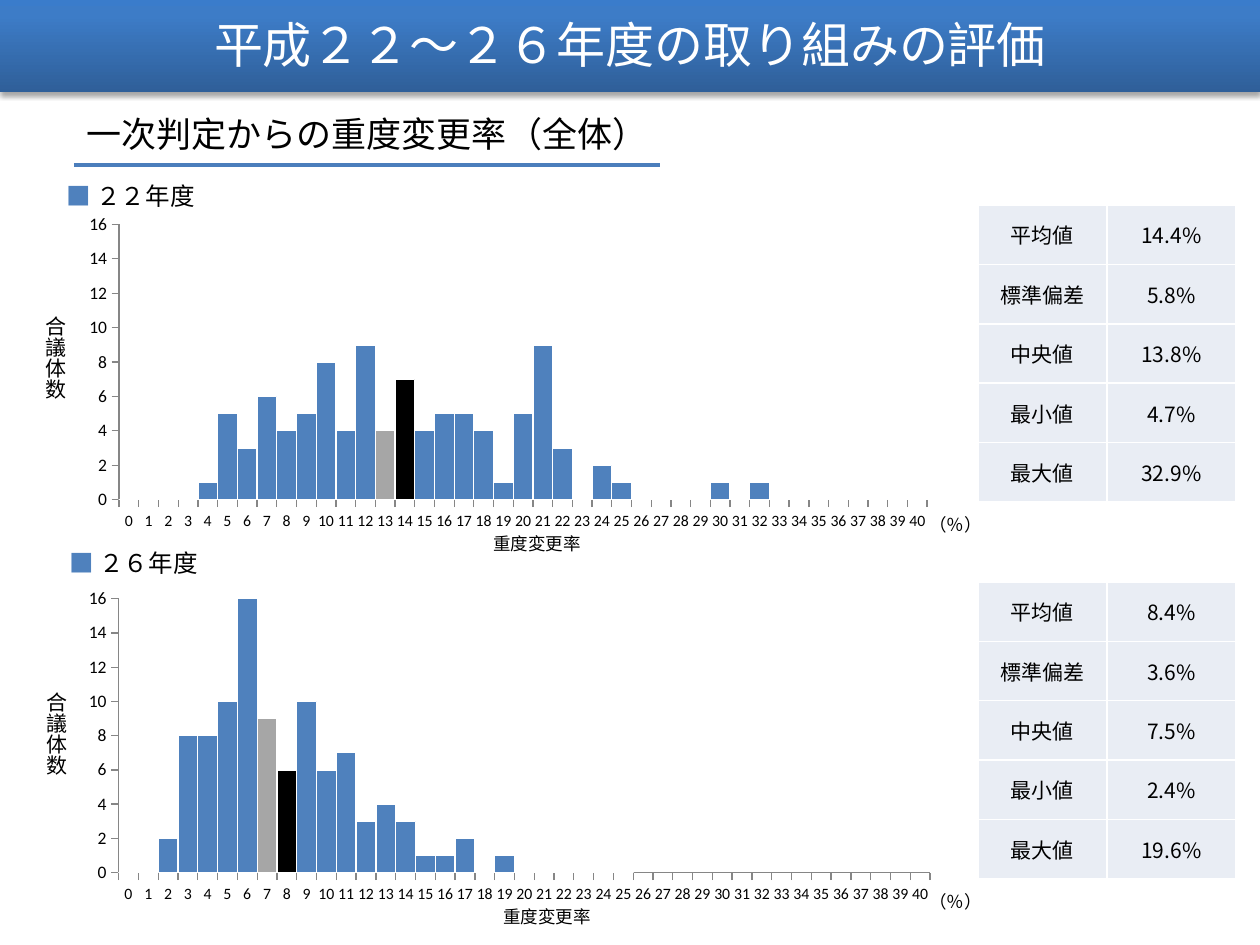
from lxml import etree
from pptx import Presentation
from pptx.chart.data import CategoryChartData
from pptx.dml.color import RGBColor
from pptx.enum.chart import XL_CHART_TYPE, XL_TICK_MARK
from pptx.enum.shapes import MSO_CONNECTOR, MSO_SHAPE
from pptx.enum.text import MSO_ANCHOR, PP_ALIGN
from pptx.oxml import parse_xml
from pptx.oxml.ns import qn
from pptx.util import Emu, Pt

COLUMN = XL_CHART_TYPE.COLUMN_CLUSTERED
OUT, NONE = XL_TICK_MARK.OUTSIDE, XL_TICK_MARK.NONE
MIDDLE, CENTER = MSO_ANCHOR.MIDDLE, PP_ALIGN.CENTER
NS = "http://schemas.openxmlformats.org/drawingml/2006/main"
LATIN, ASIAN = "Calibri", "Noto Sans CJK JP"
COLORS = {
    "bar": "4F81BD", "median": "A6A6A6", "mean": "000000", "text": "000000",
    "white": "FFFFFF", "rule": "4B7EBC", "cell": "E9EDF4", "axis": "868686",
}
GRADIENT = [(0, "2F5F99"), (80, "3D7CC7"), (100, "3A7CCB")]
TITLE = "平成２２～２６年度の取り組みの評価"
HEADING = "一次判定からの重度変更率（全体）"
STATS = ["平均値", "標準偏差", "中央値", "最小値", "最大値"]
YEARS = [
    {
        "label": ("■ ", "２２年度"), "spot": (54, 175, 179, 43),
        "chart": (26, 197, 931, 367), "plot": (0.1, 0.075, 0.868, 0.75),
        "counts": [0, 0, 0, 0, 1, 5, 3, 6, 4, 5, 8, 4, 9, 4, 7, 4, 5, 5, 4, 1, 5,
                   9, 3, 0, 2, 1, 0, 0, 0, 0, 1, 0, 1] + [0] * 8,
        "marks": {13: "median", 14: "mean"},
        "stats": ["14.4%", "5.8%", "13.8%", "4.7%", "32.9%"], "table": (978, 205),
        "unit": (917, 508, 78, 34), "side": (24, 304, 50, 97),
        "base": (481, 527, 113, 34),
    },
    {
        "label": ("■", " ２６年度"), "spot": (57, 542, 158, 43),
        "chart": (25, 571, 936, 364), "plot": (0.1, 0.076, 0.867, 0.753),
        "counts": [0, 0, 2, 8, 8, 10, 16, 9, 6, 10, 6, 7, 3, 4, 3, 1, 1, 2, 0, 1]
                  + [0] * 6 + [None] * 15,
        "marks": {7: "median", 8: "mean"},
        "stats": ["8.4%", "3.6%", "7.5%", "2.4%", "19.6%"], "table": (978, 582),
        "unit": (917, 885, 78, 34), "side": (25, 680, 50, 97),
        "base": (491, 900, 113, 34),
    },
]


def px(n):
    return Emu(round(n * 914400 / 126))


def box(spot):
    return [px(n) for n in spot]


def rgb(name):
    return RGBColor.from_string(COLORS[name])


def style(para, size, color="text", face=ASIAN):
    font = para.font
    font.size, font.name = Pt(size), face
    font.color.rgb = rgb(color)
    props = para._p.pPr.find(qn("a:defRPr"))
    etree.SubElement(props, qn("a:ea")).set("typeface", ASIAN)


def add_text(slide, spot, parts, size, wrap=False, vert=None):
    frame = slide.shapes.add_textbox(*box(spot)).text_frame
    frame.word_wrap = wrap
    if vert:
        frame._txBody.bodyPr.set("vert", vert)
    para = frame.paragraphs[0]
    for text, color in parts:
        run = para.add_run()
        run.text = text
        if color != "text":
            run.font.color.rgb = rgb(color)
    style(para, size)


def add_title(slide):
    bar = slide.shapes.add_shape(MSO_SHAPE.RECTANGLE, *box((0, -4, 1260, 96)))
    bar.line.fill.background()
    bar.fill.gradient()
    bar.fill.gradient_angle = 90
    stops = bar._element.spPr.find(qn("a:gradFill")).find(qn("a:gsLst"))
    for stop in list(stops):
        stops.remove(stop)
    for pos, color in GRADIENT:
        stops.append(parse_xml(
            f'<a:gs xmlns:a="{NS}" pos="{pos * 1000}"><a:srgbClr val="{color}"/></a:gs>'))
    bar.shadow.inherit = False
    bar._element.spPr.find(qn("a:effectLst")).append(parse_xml(
        f'<a:outerShdw xmlns:a="{NS}" blurRad="{Pt(3.1)}" dist="{Pt(1.8)}" '
        'dir="5400000" rotWithShape="0"><a:srgbClr val="000000">'
        '<a:alpha val="35000"/></a:srgbClr></a:outerShdw>'))
    frame = bar.text_frame
    frame.vertical_anchor = MIDDLE
    para = frame.paragraphs[0]
    para.text, para.alignment = TITLE, CENTER
    style(para, 28, "white", LATIN)


def add_chart(slide, year):
    data = CategoryChartData()
    data.categories = [str(n) for n in range(41)]
    data.add_series("Series 1", year["counts"])
    chart = slide.shapes.add_chart(COLUMN, *box(year["chart"]), data).chart
    chart.has_legend = chart.has_title = False
    chart.font.size, chart.font.name = Pt(10), LATIN
    chart.font.color.rgb = rgb("text")
    plot = chart.plots[0]
    plot.gap_width, plot.vary_by_categories = 0, False
    series = plot.series[0]
    series.smooth = False if hasattr(series, "smooth") else None
    fills = [(series.format, "bar")]
    fills += [(series.points[n].format, key) for n, key in year["marks"].items()]
    for form, key in fills:
        form.fill.solid()
        form.fill.fore_color.rgb = rgb(key)
        form.line.color.rgb = rgb("white")
        form.line.width = Pt(0.75)
    for axis in (chart.category_axis, chart.value_axis):
        axis.has_major_gridlines = False
        axis.major_tick_mark, axis.minor_tick_mark = OUT, NONE
        axis.format.line.color.rgb = rgb("axis")
        axis.format.line.width = Pt(0.75)
    chart.category_axis.tick_labels.font.size = Pt(9)
    scale = chart.value_axis
    scale.minimum_scale, scale.maximum_scale, scale.major_unit = 0, 16, 2
    area = chart._chartSpace.chart.plotArea
    old = area.find(qn("c:layout"))
    if old is not None:
        area.remove(old)
    layout = etree.Element(qn("c:layout"))
    manual = etree.SubElement(layout, qn("c:manualLayout"))
    keys = ("layoutTarget", "xMode", "yMode", "x", "y", "w", "h")
    for key, val in zip(keys, ("inner", "edge", "edge", *year["plot"])):
        etree.SubElement(manual, qn("c:" + key)).set("val", str(val))
    area.insert(0, layout)


def add_table(slide, year):
    rows = list(zip(STATS, year["stats"]))
    spot = (*year["table"], 258, 297)
    table = slide.shapes.add_table(len(rows), 2, *box(spot)).table
    table.first_row = table.horz_banding = False
    for i, row in enumerate(rows):
        table.rows[i].height = px(297 / len(rows))
        for j, text in enumerate(row):
            cell = table.cell(i, j)
            cell.margin_left = cell.margin_right = 0
            cell.margin_top = cell.margin_bottom = 0
            cell.vertical_anchor = MIDDLE
            for side in "LRTB":
                cell._tc.get_or_add_tcPr().append(parse_xml(
                    f'<a:ln{side} xmlns:a="{NS}" w="{Pt(1)}"><a:solidFill>'
                    f'<a:srgbClr val="{COLORS["white"]}"/></a:solidFill></a:ln{side}>'))
            cell.fill.solid()
            cell.fill.fore_color.rgb = rgb("cell")
            para = cell.text_frame.paragraphs[0]
            para.text, para.alignment = text, CENTER
            style(para, 12)


def main():
    prs = Presentation()
    prs.slide_width, prs.slide_height = px(1260), px(945)
    slide = prs.slides.add_slide(prs.slide_layouts[6])
    add_title(slide)
    add_text(slide, (74, 106, 615, 55), [(HEADING, "text")], 20, True)
    rule = slide.shapes.add_connector(MSO_CONNECTOR.STRAIGHT, *box((74, 165, 660, 165)))
    rule.line.color.rgb, rule.line.width = rgb("rule"), Pt(2.25)
    etree.SubElement(rule._element.spPr, qn("a:effectLst"))
    for year in YEARS:
        add_chart(slide, year)
        add_table(slide, year)
        mark, name = year["label"]
        add_text(slide, year["spot"], [(mark, "bar"), (name, "text")], 14)
        add_text(slide, year["unit"], [("（％）", "text")], 10)
        add_text(slide, year["side"], [("合議体数", "text")], 12, vert="eaVert")
        add_text(slide, year["base"], [("重度変更率", "text")], 10)
    prs.save("out.pptx")


if __name__ == "__main__":
    main()
